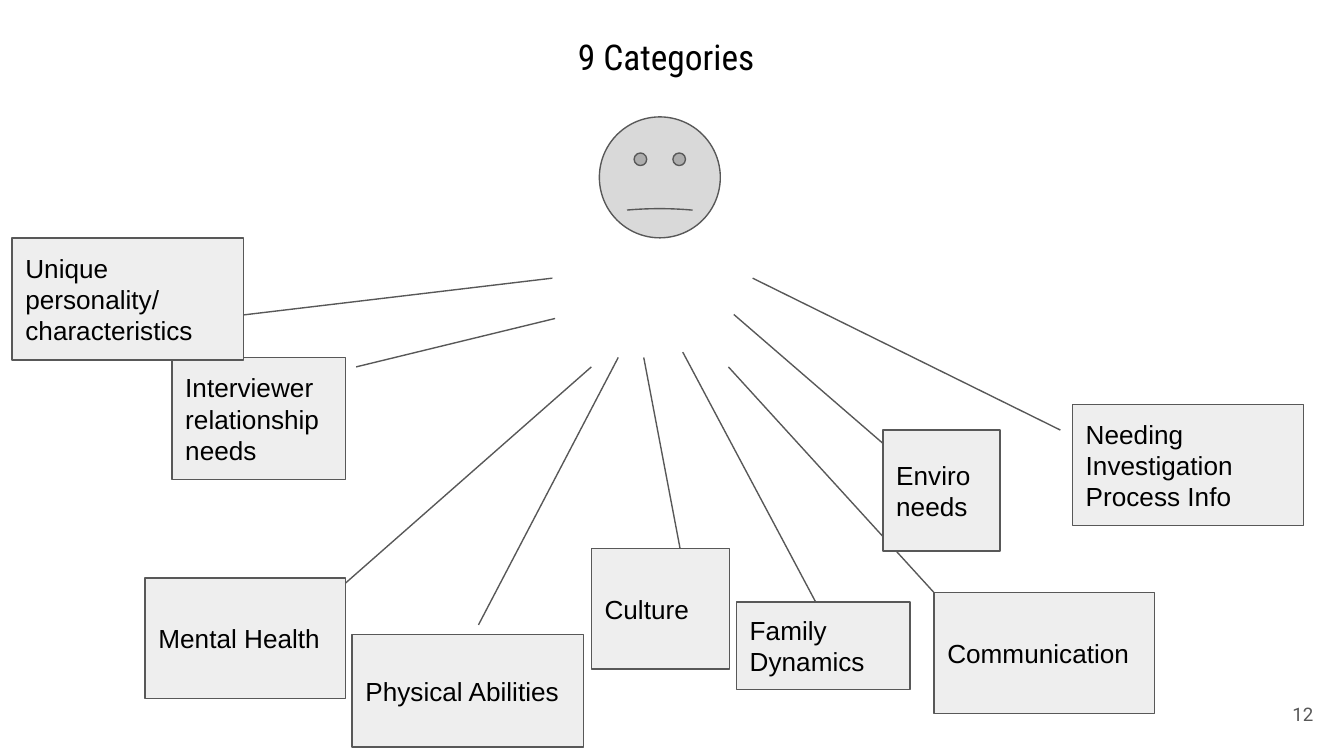
from dataclasses import dataclass

from lxml import etree
from pptx import Presentation
from pptx import util as u
from pptx.dml.color import RGBColor
from pptx.enum import shapes, text
from pptx.oxml.ns import qn


@dataclass(frozen=True)
class Theme:
    ink: str = "000000"
    edge: str = "585858"
    face: str = "D9D9D9"
    card: str = "EEEEEE"
    body: str = "Arial"
    head: str = "Roboto Condensed"
    foot: str = "Roboto"
    body_pt: int = 14
    head_pt: int = 19
    foot_pt: int = 10
    rule_pt: float = 0.75


@dataclass(frozen=True)
class Area:
    col: float
    row: float
    cols: float
    rows: float


@dataclass(frozen=True)
class Card:
    label: str
    area: Area


@dataclass(frozen=True)
class Ray:
    col: float
    row: float
    to_col: float
    to_row: float


THEME = Theme()
WIDTH = u.Inches(10)
HEIGHT = WIDTH * 9 // 16
COLS, ROWS = 100, 56.25

RAYS = [
    Ray(44, 27.3, 24.9, 44.1),
    Ray(54.2, 27.3, 69.5, 44.1),
    Ray(56, 20.7, 78.9, 32),
    Ray(47.9, 26.6, 50.6, 40.8),
    Ray(41.3, 23.7, 26.5, 27.3),
    Ray(46, 26.6, 35.6, 46.5),
    Ray(50.8, 26.2, 60.8, 45),
    Ray(54.6, 23.4, 66.4, 33.6),
    Ray(41.1, 20.7, 11.7, 24.2),
]

CARDS = [
    Card("Mental Health", Area(10.8, 43, 14.9, 9)),
    Card("Communication", Area(69.5, 44.1, 16.4, 9)),
    Card("Needing Investigation Process Info", Area(79.8, 30.1, 17.2, 9)),
    Card("Culture", Area(44, 40.8, 10.3, 9)),
    Card("Interviewer relationship needs", Area(12.8, 26.6, 12.9, 9.1)),
    Card("Physical Abilities", Area(26.2, 47.2, 17.2, 8.4)),
    Card("Family Dynamics", Area(54.8, 44.8, 12.9, 6.5)),
    Card("Enviro needs", Area(65.7, 32, 8.7, 9)),
    Card("Unique personality/\ncharacteristics", Area(0.9, 17.7, 17.2, 9.1)),
]


def x(col: float) -> int:
    return round(WIDTH * col / COLS)


def y(row: float) -> int:
    return round(HEIGHT * row / ROWS)


def place(area: Area) -> tuple:
    return x(area.col), y(area.row), x(area.cols), y(area.rows)


def write(shape, words: str, font: str, size: int, color: str,
          align=text.PP_ALIGN.LEFT, anchor=text.MSO_ANCHOR.MIDDLE,
          wrap: bool = True, inset: float = 0.1) -> None:
    frame = shape.text_frame
    frame.text = words
    frame.auto_size = text.MSO_AUTO_SIZE.NONE
    frame.word_wrap = wrap
    frame.vertical_anchor = anchor
    frame.margin_left = frame.margin_right = u.Inches(inset)
    frame.margin_top = frame.margin_bottom = u.Inches(inset)
    for para in frame.paragraphs:
        para.alignment = align
        for run in para.runs:
            run.font.name = font
            run.font.size = u.Pt(size)
            run.font.color.rgb = RGBColor.from_string(color)


def edge(line) -> None:
    line.color.rgb = RGBColor.from_string(THEME.edge)
    line.width = u.Pt(THEME.rule_pt)


def draw_shape(slide, kind, area: Area, fill: str):
    shape = slide.shapes.add_shape(kind, *place(area))
    shape.shadow.inherit = False
    shape.fill.solid()
    shape.fill.fore_color.rgb = RGBColor.from_string(fill)
    edge(shape.line)
    return shape


def draw_ray(slide, ray: Ray) -> None:
    line = slide.shapes.add_connector(
        shapes.MSO_CONNECTOR.STRAIGHT,
        x(ray.col), y(ray.row), x(ray.to_col), y(ray.to_row))
    edge(line.line)
    etree.SubElement(line._element.spPr, qn("a:effectLst"))


def draw_card(slide, card: Card) -> None:
    shape = draw_shape(slide, shapes.MSO_SHAPE.RECTANGLE, card.area, THEME.card)
    write(shape, card.label, THEME.body, THEME.body_pt, THEME.ink)


def draw_title(slide, words: str, area: Area) -> None:
    title = slide.shapes.title
    title.left, title.top, title.width, title.height = place(area)
    write(title, words, THEME.head, THEME.head_pt, THEME.ink,
          anchor=text.MSO_ANCHOR.TOP, wrap=False, inset=0.05)


def draw_number(slide, words: str, area: Area) -> None:
    box = slide.shapes.add_textbox(*place(area))
    write(box, words, THEME.foot, THEME.foot_pt, THEME.edge,
          align=text.PP_ALIGN.RIGHT, wrap=False)


def main() -> None:
    deck = Presentation()
    deck.slide_width, deck.slide_height = WIDTH, HEIGHT
    slide = deck.slides.add_slide(deck.slide_layouts[5])
    draw_title(slide, "9 Categories", Area(42.5, 2.1, 15, 4.2))
    face = draw_shape(slide, shapes.MSO_SHAPE.SMILEY_FACE,
                      Area(44.6, 8.7, 9, 9), THEME.face)
    face.adjustments[0] = -0.006
    for ray in RAYS:
        draw_ray(slide, ray)
    for card in CARDS:
        draw_card(slide, card)
    draw_number(slide, "12", Area(95, 51.4, 3.7, 3.5))
    deck.save("out.pptx")


if __name__ == "__main__":
    main()
